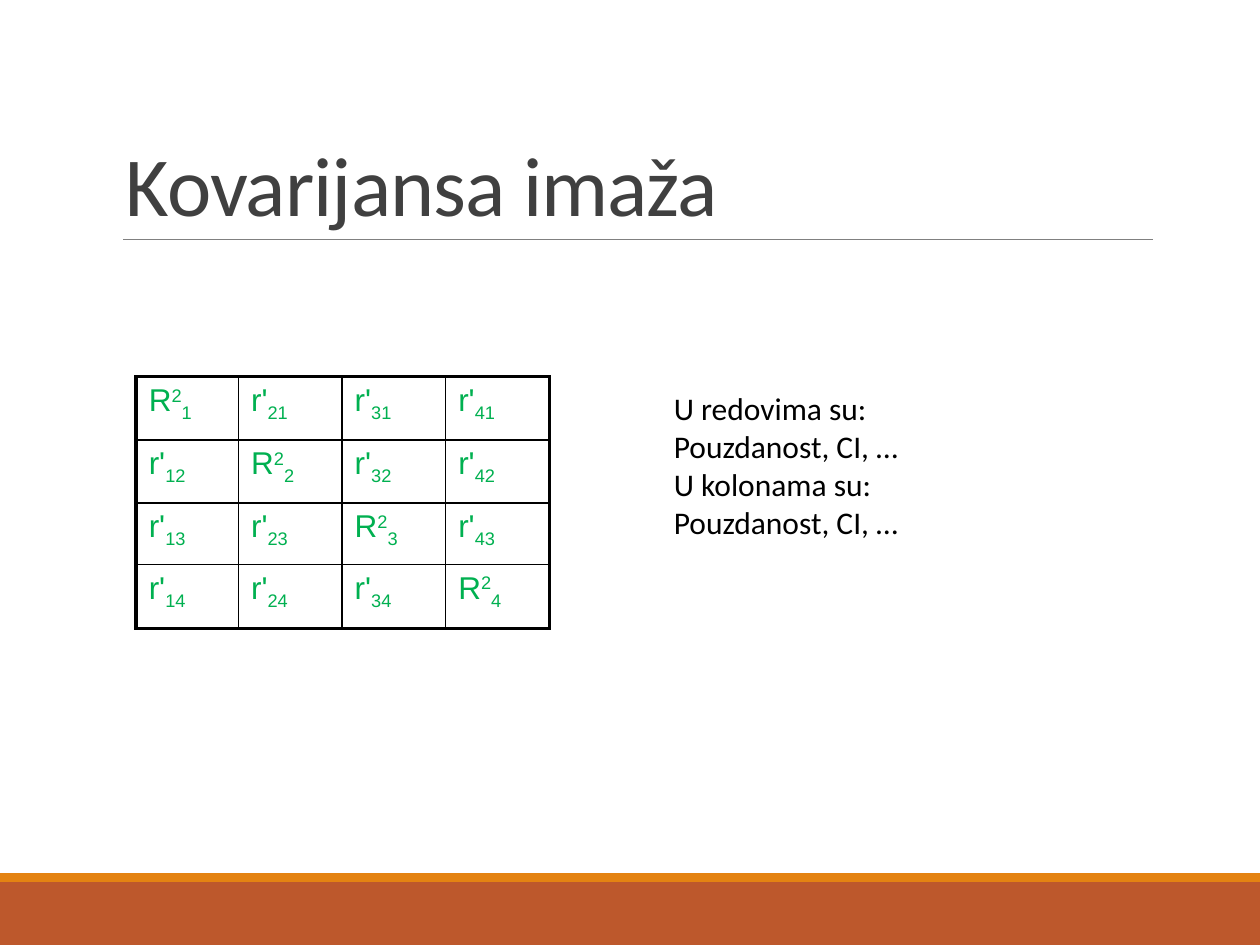
import pptx
import pptx.dml.color
import pptx.enum.shapes
import pptx.enum.text
import pptx.oxml.ns
import pptx.util
from lxml import etree

Pt = pptx.util.Pt

TITLE = "Kovarijansa imaža"
NOTES = ["U redovima su:", "Pouzdanost, CI, …", "U kolonama su:", "Pouzdanost, CI, …"]
BANDS = [("BD582C", 504, 36), ("E48312", 499, 5)]
COLUMN_WIDTHS = [58.5, 59.2, 59.2, 59.2]
ROW_HEIGHTS = [36, 36, 35.3, 36.5]
SIZE = 4
BASELINES = {"super": "30000", "sub": "-25000"}


def color(value):
    return pptx.dml.color.RGBColor.from_string(value)


def style(paragraph, name, size, value):
    paragraph.font.name = name
    paragraph.font.size = Pt(size)
    paragraph.font.color.rgb = color(value)


def add_run(paragraph, text, position=None):
    run = paragraph.add_run()
    run.text = text
    if position:
        run._r.get_or_add_rPr().set("baseline", BASELINES[position])
    return run


def add_text_box(slide, left, top, width, height):
    frame = slide.shapes.add_textbox(Pt(left), Pt(top), Pt(width), Pt(height)).text_frame
    frame.word_wrap = True
    return frame


def set_border(cell, side, width):
    properties = cell._tc.get_or_add_tcPr()
    line = etree.SubElement(properties, pptx.oxml.ns.qn("a:ln" + side), w=str(Pt(width)))
    fill = etree.SubElement(line, pptx.oxml.ns.qn("a:solidFill"))
    etree.SubElement(fill, pptx.oxml.ns.qn("a:srgbClr"), val="000000")


def fill_cell(cell, row, column):
    paragraph = cell.text_frame.paragraphs[0]
    style(paragraph, "Arial", 18, "00B050")
    if row == column:
        add_run(paragraph, "R")
        add_run(paragraph, "2", "super")
        add_run(paragraph, str(row + 1), "sub")
    else:
        add_run(paragraph, "r'")
        add_run(paragraph, f"{column + 1}{row + 1}", "sub")
    outer = {"L": column == 0, "R": column == SIZE - 1, "T": row == 0, "B": row == SIZE - 1}
    for side, is_outer in outer.items():
        set_border(cell, side, 2.25 if is_outer else 1)
    cell.fill.background()


def add_matrix(slide):
    frame = slide.shapes.add_table(
        SIZE, SIZE, Pt(77.8), Pt(215.3), Pt(sum(COLUMN_WIDTHS)), Pt(sum(ROW_HEIGHTS)))
    table = frame.table
    table.first_row = False
    table.horz_banding = False
    for column, width in zip(table.columns, COLUMN_WIDTHS):
        column.width = Pt(width)
    for row, height in zip(table.rows, ROW_HEIGHTS):
        row.height = Pt(height)
    for row in range(SIZE):
        for column in range(SIZE):
            fill_cell(table.cell(row, column), row, column)


def main():
    presentation = pptx.Presentation()
    presentation.slide_width = Pt(720)
    presentation.slide_height = Pt(540)
    slide = presentation.slides.add_slide(presentation.slide_layouts[6])

    for value, top, height in BANDS:
        band = slide.shapes.add_shape(
            pptx.enum.shapes.MSO_SHAPE.RECTANGLE, 0, Pt(top), Pt(720), Pt(height))
        band.shadow.inherit = False
        band.fill.solid()
        band.fill.fore_color.rgb = color(value)
        band.line.fill.background()

    rule = slide.shapes.add_connector(
        pptx.enum.shapes.MSO_CONNECTOR.STRAIGHT, Pt(70.5), Pt(136.8), Pt(659), Pt(136.8))
    rule.line.color.rgb = color("808080")
    rule.line.width = Pt(0.5)
    etree.SubElement(rule._element.spPr, pptx.oxml.ns.qn("a:effectLst"))

    title = add_text_box(slide, 64.8, 22.3, 594, 114.5)
    title.vertical_anchor = pptx.enum.text.MSO_ANCHOR.BOTTOM
    paragraph = title.paragraphs[0]
    paragraph.line_spacing = 0.85
    style(paragraph, "Calibri", 48, "404040")
    add_run(paragraph, TITLE)._r.get_or_add_rPr().set("spc", "-50")

    add_matrix(slide)

    notes = add_text_box(slide, 378, 218.9, 216, 94.3)
    notes.text = "\n".join(NOTES)
    for paragraph in notes.paragraphs:
        style(paragraph, "Calibri", 18, "000000")

    presentation.save("out.pptx")


if __name__ == "__main__":
    main()
